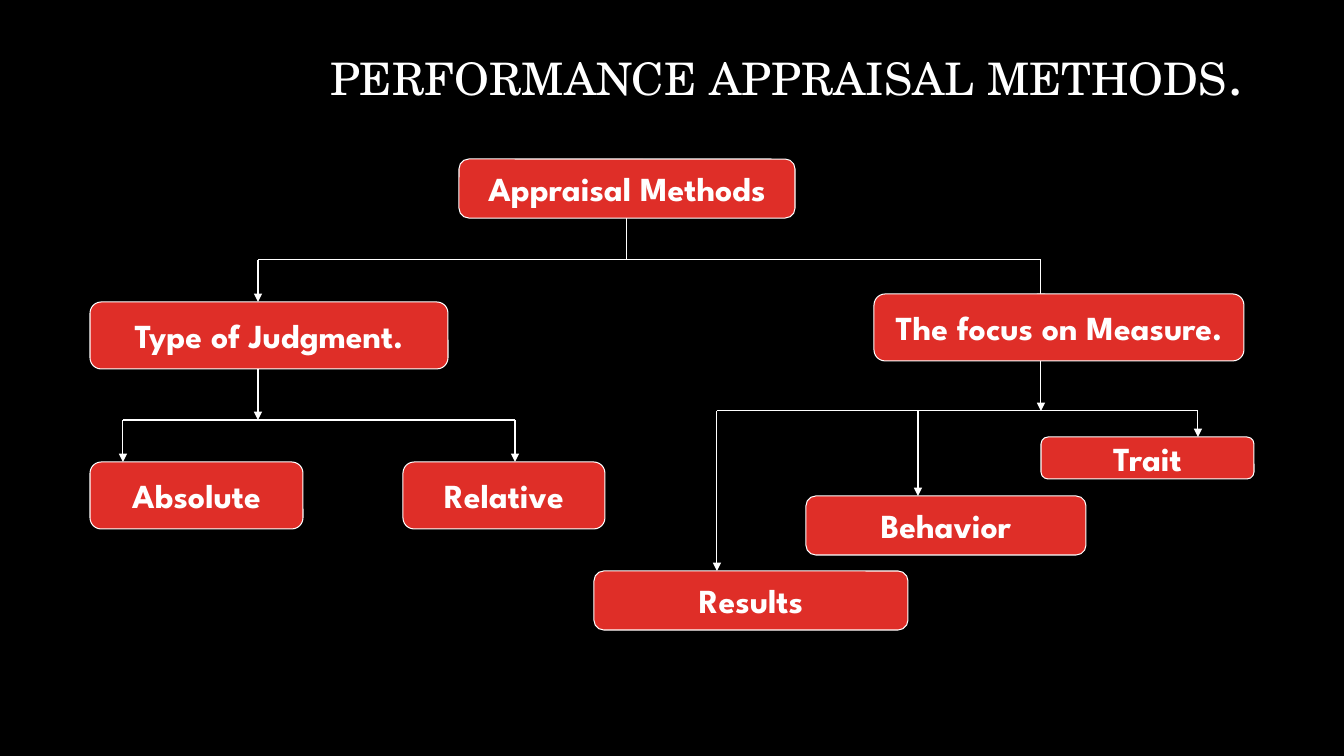
from lxml.etree import SubElement
from pptx import Presentation
from pptx.dml.color import RGBColor
from pptx.enum.shapes import MSO_CONNECTOR, MSO_SHAPE
from pptx.enum.text import MSO_ANCHOR, PP_ALIGN
from pptx.oxml.ns import qn
from pptx.util import Emu, Pt

BLACK = RGBColor(0x00, 0x00, 0x00)
WHITE = RGBColor(0xFF, 0xFF, 0xFF)
RED = RGBColor(0xDF, 0x2E, 0x28)
SANS = "League Spartan"
SERIF = "TeX Gyre Schola"
LINE_WIDTH = Pt(0.75)
EMU_PER_PX = 914400 / 100.8

# Label, left, top, width, height
METHODS = [
    ("Appraisal Methods", 459, 159, 336, 59),
    ("Type of Judgment.", 90, 302, 358, 67),
    ("The focus on Measure.", 874, 294, 370, 67),
    ("Absolute", 90, 462, 213, 67),
    ("Relative", 403, 462, 202, 67),
    ("Results", 594, 571, 314, 59),
    ("Behavior", 806, 496, 280, 59),
    ("Trait", 1041, 437, 213, 42),
]

# Stem x, stem top, crossbar y, arrow on stem, drops as (x, bottom)
BRANCHES = [
    (627, 218, 260, False, [(258, 302), (1041, 302)]),
    (258, 369, 420, True, [(123, 462), (515, 462)]),
    (1041, 361, 411, True, [(717, 571), (918, 496), (1198, 437)]),
]


def px(length):
    return Emu(round(length * EMU_PER_PX))


def style_run(run, size, font_name, bold=False):
    run.font.size = Pt(size)
    run.font.name = font_name
    run.font.bold = bold
    run.font.color.rgb = WHITE


def add_title(slide):
    title = slide.shapes.add_textbox(px(305), px(21), px(950), px(113))
    frame = title.text_frame
    frame.word_wrap = True
    frame.vertical_anchor = MSO_ANCHOR.MIDDLE
    heading = frame.paragraphs[0]
    heading.text = "PERFORMANCE APPRAISAL METHODS"
    heading.alignment = PP_ALIGN.RIGHT
    heading.line_spacing = 0.9
    style_run(heading.runs[0], 32, SERIF)
    full_stop = heading.add_run()
    full_stop.text = "."
    style_run(full_stop, 40, SANS)


def add_method(slide, label, left, top, width, height):
    method = slide.shapes.add_shape(
        MSO_SHAPE.FLOWCHART_ALTERNATE_PROCESS,
        px(left), px(top), px(width), px(height))
    method.shadow.inherit = False
    method.fill.solid()
    method.fill.fore_color.rgb = RED
    method.line.color.rgb = WHITE
    method.line.width = LINE_WIDTH
    frame = method.text_frame
    frame.text = label
    frame.word_wrap = False
    frame.vertical_anchor = MSO_ANCHOR.MIDDLE
    frame.paragraphs[0].alignment = PP_ALIGN.CENTER
    style_run(frame.paragraphs[0].runs[0], 24, SANS, bold=True)


def add_line(slide, x1, y1, x2, y2, arrow=False):
    line = slide.shapes.add_connector(
        MSO_CONNECTOR.STRAIGHT, px(x1), px(y1), px(x2), px(y2))
    line.line.color.rgb = WHITE
    line.line.width = LINE_WIDTH
    if arrow:
        SubElement(line.line._get_or_add_ln(), qn("a:tailEnd"), type="triangle")
    SubElement(line._element.spPr, qn("a:effectLst"))


def add_branch(slide, stem_x, stem_top, bar_y, stem_arrow, drops):
    add_line(slide, stem_x, stem_top, stem_x, bar_y, stem_arrow)
    add_line(slide, drops[0][0], bar_y, drops[-1][0], bar_y)
    for x, bottom in drops:
        add_line(slide, x, bar_y, x, bottom, arrow=True)


def main():
    deck = Presentation()
    deck.slide_width, deck.slide_height = px(1344), px(756)
    slide = deck.slides.add_slide(deck.slide_layouts[6])
    slide.background.fill.solid()
    slide.background.fill.fore_color.rgb = BLACK

    add_title(slide)
    # Lines go first so that the boxes cover their ends
    for branch in BRANCHES:
        add_branch(slide, *branch)
    for method in METHODS:
        add_method(slide, *method)

    deck.save("out.pptx")


if __name__ == "__main__":
    main()
